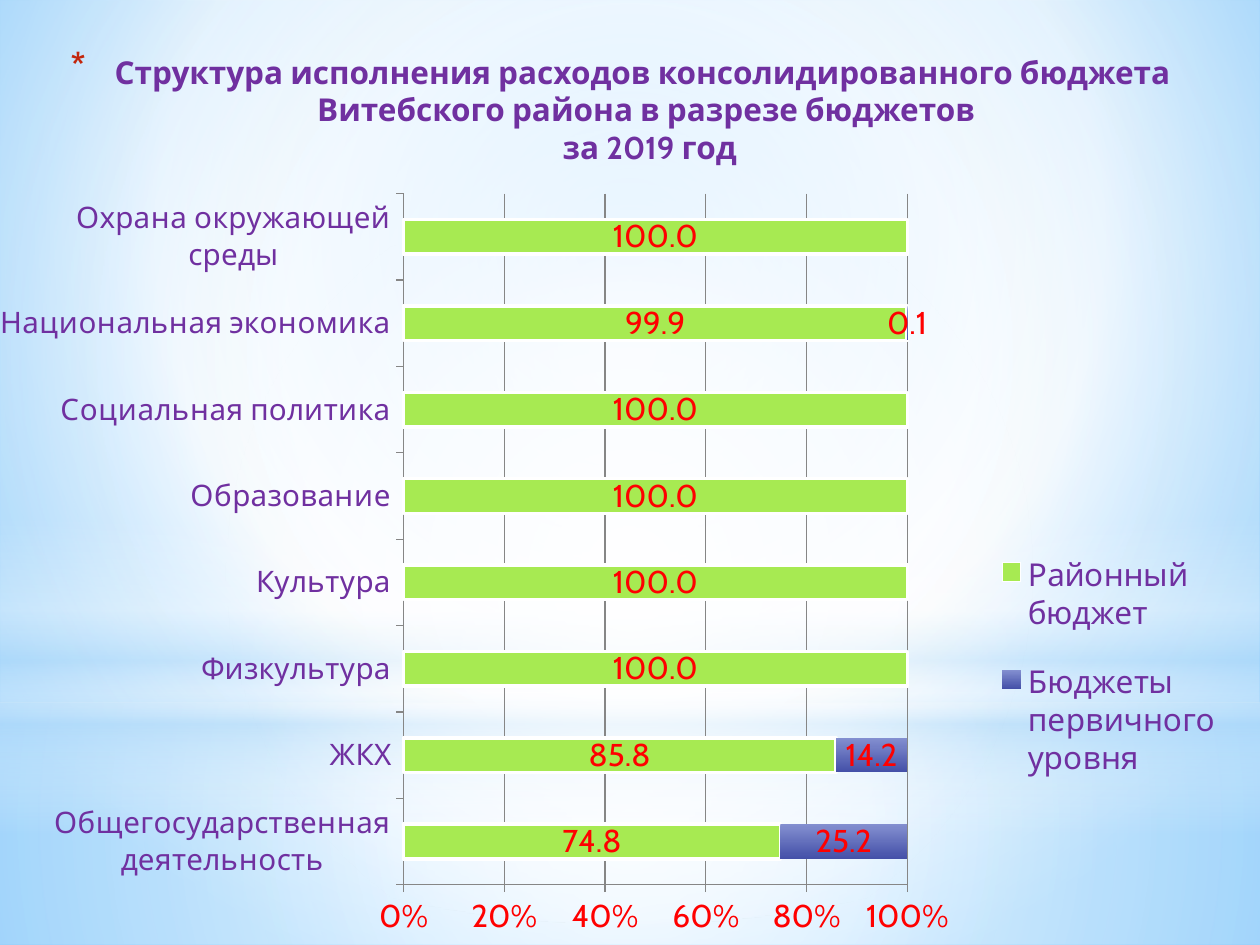
"""Build the slide on budget spending of Vitebsk district by budget level."""
from typing import NamedTuple, Optional

from lxml.etree import SubElement
from pptx import Presentation
from pptx.chart.data import CategoryChartData
from pptx.dml.color import RGBColor
from pptx.enum.chart import XL_CHART_TYPE as ChartType, XL_LEGEND_POSITION as LegendPosition
from pptx.enum.chart import XL_TICK_MARK as TickMark
from pptx.enum.shapes import MSO_SHAPE as Preset
from pptx.enum.text import MSO_ANCHOR as Anchor, MSO_AUTO_SIZE as AutoSize, PP_ALIGN as Align
from pptx.oxml.ns import qn
from pptx.util import Cm, Pt

FONT = "Cabin"
PURPLE, RED, GRAY = "7030A0", "FF0000", "868686"
CENTRE = (50, 50, 50, 50)


class Stop(NamedTuple):
    place: int
    color: str
    opacity: int = 100


class Glow(NamedTuple):
    preset: Preset
    top: float
    height: float
    stops: list[Stop]
    focus: Optional[tuple[int, int, int, int]] = CENTRE


class Budget(NamedTuple):
    name: str
    shares: list[Optional[float]]


BACKDROP = [Stop(0, "9ED5FF"), Stop(60, "FFFFFF"), Stop(100, "5BB9FF")]
GLOWS = [
    Glow(Preset.RECTANGLE, 14.17, 4.88,
         [Stop(0, "FFFFFF", 91), Stop(37, "FFFFFF", 76), Stop(100, "B4DCFA", 79)]),
    Glow(Preset.RECTANGLE, 0, 14.17,
         [Stop(0, "FFFFFF", 89), Stop(48, "FFFFFF", 62), Stop(100, "B4DCFA", 79)]),
    Glow(Preset.RECTANGLE, 10.46, 6.35,
         [Stop(0, "FFFFFF", 0), Stop(29, "FFFFFF", 30), Stop(45, "B4DCFA", 40),
          Stop(55, "FFFFFF", 26), Stop(65, "B4DCFA", 60), Stop(100, "FFFFFF", 0)], None),
    Glow(Preset.OVAL, 4.45, 14.17, [Stop(0, "FFFFFF"), Stop(56, "FFFFFF", 0)]),
]
HEADING = [
    "Структура исполнения расходов консолидированного бюджета ",
    "Витебского района в разрезе бюджетов",
    " за 2019 год",
]
SECTORS = [
    "Общегосударственная деятельность", "ЖКХ", "Физкультура", "Культура", "Образование",
    "Социальная политика", "Национальная экономика", "Охрана окружающей среды",
]
DISTRICT = Budget("Районный бюджет", [74.8, 85.8, 100, 100, 100, 100, 99.9, 100])
PRIMARY = Budget("Бюджеты первичного уровня", [25.2, 14.2, None, None, None, None, 0.1, None])


def rgb(code: str) -> RGBColor:
    """Turn a hex string into a colour."""
    return RGBColor.from_string(code)


def style_font(font, size: float, color: str, bold: bool = False) -> None:
    """Set typeface, size, colour and weight."""
    font.name, font.size, font.bold = FONT, Pt(size), bold
    font.color.rgb = rgb(color)


def blend(parent, stops: list[Stop], focus: Optional[tuple[int, int, int, int]]) -> None:
    """Replace the solid fill in parent by a radial or a downward gradient."""
    solid = parent.find(qn("a:solidFill"))
    gradient = SubElement(parent, qn("a:gradFill"), rotWithShape="1")
    parent.replace(solid, gradient)
    listing = SubElement(gradient, qn("a:gsLst"))
    for stop in stops:
        entry = SubElement(listing, qn("a:gs"), pos=str(stop.place * 1000))
        color = SubElement(entry, qn("a:srgbClr"), val=stop.color)
        if stop.opacity < 100:
            SubElement(color, qn("a:alpha"), val=str(stop.opacity * 1000))
    if focus is None:
        SubElement(gradient, qn("a:lin"), ang="5400000", scaled="0")
    else:
        circle = SubElement(gradient, qn("a:path"), path="circle")
        SubElement(circle, qn("a:fillToRect"),
                   {side: str(value * 1000) for side, value in zip("ltrb", focus)})


def draw_glow(slide, glow: Glow) -> None:
    """Draw one full-width translucent layer of the backdrop."""
    layer = slide.shapes.add_shape(glow.preset, 0, Cm(glow.top), Cm(25.4), Cm(glow.height))
    layer.shadow.inherit = False
    layer.line.fill.background()
    layer.fill.solid()
    blend(layer.element.spPr, glow.stops, glow.focus)


def write_heading(title) -> None:
    """Place and fill the title with its starred bullet."""
    title.left, title.top, title.width, title.height = Cm(0.89), Cm(0.91), Cm(23.39), Cm(2.59)
    title.element.getparent().append(title.element)
    frame = title.text_frame
    frame.word_wrap, frame.auto_size = True, AutoSize.NONE
    frame.vertical_anchor = Anchor.MIDDLE
    paragraph = frame.paragraphs[0]
    paragraph.alignment = Align.CENTER
    for index, line in enumerate(HEADING):
        if index:
            paragraph.add_line_break()
        run = paragraph.add_run()
        run.text = line
        style_font(run.font, 18, PURPLE, True)
    settings = paragraph._p.get_or_add_pPr()
    settings.set("marL", str(Cm(0.89)))
    settings.set("indent", str(-Cm(0.89)))
    SubElement(SubElement(settings, qn("a:buClr")), qn("a:srgbClr"), val="C3260C")
    SubElement(settings, qn("a:buSzPct"), val="128000")
    SubElement(settings, qn("a:buChar"), char="*")


def set_layout(part, index: int, inner: bool, **box: float) -> None:
    """Give a chart part a fixed place as fractions of the chart."""
    for previous in part.findall(qn("c:layout")):
        part.remove(previous)
    layout = SubElement(part, qn("c:layout"))
    part.insert(index, layout)
    manual = SubElement(layout, qn("c:manualLayout"))
    if inner:
        SubElement(manual, qn("c:layoutTarget"), val="inner")
    for mode in ("xMode", "yMode"):
        SubElement(manual, qn(f"c:{mode}"), val="edge")
    for key, fraction in box.items():
        SubElement(manual, qn(f"c:{key}"), val=str(fraction))


def style_axis(axis, size: float, color: str) -> None:
    """Format the labels, ticks and line of an axis."""
    style_font(axis.tick_labels.font, size, color)
    axis.major_tick_mark, axis.minor_tick_mark = TickMark.OUTSIDE, TickMark.NONE
    axis.format.line.color.rgb = rgb(GRAY)
    axis.format.line.width = Pt(0.75)


def draw_chart(slide) -> None:
    """Draw the stacked shares of both budget levels by sector."""
    shares = CategoryChartData(number_format="0.0")
    shares.categories = SECTORS
    for budget in (DISTRICT, PRIMARY):
        shares.add_series(budget.name, budget.shares)
    chart = slide.shapes.add_chart(ChartType.BAR_STACKED_100, 0, Cm(3.89), Cm(25.4),
                                   Cm(15.16), shares).chart
    style_font(chart.font, 18, RED)
    chart.has_title = False
    style_axis(chart.category_axis, 16.9, PURPLE)
    style_axis(chart.value_axis, 18, RED)
    chart.value_axis.tick_labels.number_format = "0%"
    chart.value_axis.tick_labels.number_format_is_linked = False
    grid = chart.value_axis.major_gridlines.format.line
    grid.color.rgb, grid.width = rgb(GRAY), Pt(0.75)

    plot = chart.plots[0]
    plot.gap_width, plot.overlap, plot.vary_by_categories = 150, 100, False
    for series in plot.series:
        labels = series.data_labels
        labels.show_value = True
        labels.number_format, labels.number_format_is_linked = "0.0", False
        style_font(labels.font, 18, RED)
    district, primary = plot.series
    district.format.fill.solid()
    district.format.fill.fore_color.rgb = rgb("A7EA52")
    district.format.line.color.rgb = rgb("FFFFFF")
    district.format.line.width = Pt(2)
    primary.format.fill.gradient()
    primary.format.fill.gradient_angle = 270
    for stop, color in zip(primary.format.fill.gradient_stops, ("838FD0", "4450A8")):
        stop.color.rgb = rgb(color)

    chart.has_legend = True
    chart.legend.position = LegendPosition.RIGHT
    chart.legend.include_in_layout = False
    style_font(chart.legend.font, 18, PURPLE)
    set_layout(chart.element.find(f".//{qn('c:plotArea')}"), 0, True,
               x=0.32, y=0, w=0.4, h=0.92)
    set_layout(chart.element.find(f".//{qn('c:legend')}"), 1, False,
               x=0.78, y=0.44, w=0.2, h=0.38)


def main() -> None:
    """Assemble and save the slide."""
    deck = Presentation()
    deck.slide_width, deck.slide_height = Cm(25.4), Cm(19.05)
    slide = deck.slides.add_slide(deck.slide_layouts[5])
    slide.background.fill.solid()
    blend(slide.element.find(f".//{qn('p:bgPr')}"), BACKDROP, (20, 10, 20, 60))
    for glow in GLOWS:
        draw_glow(slide, glow)
    write_heading(slide.shapes.title)
    draw_chart(slide)
    deck.save("out.pptx")


if __name__ == "__main__":
    main()
